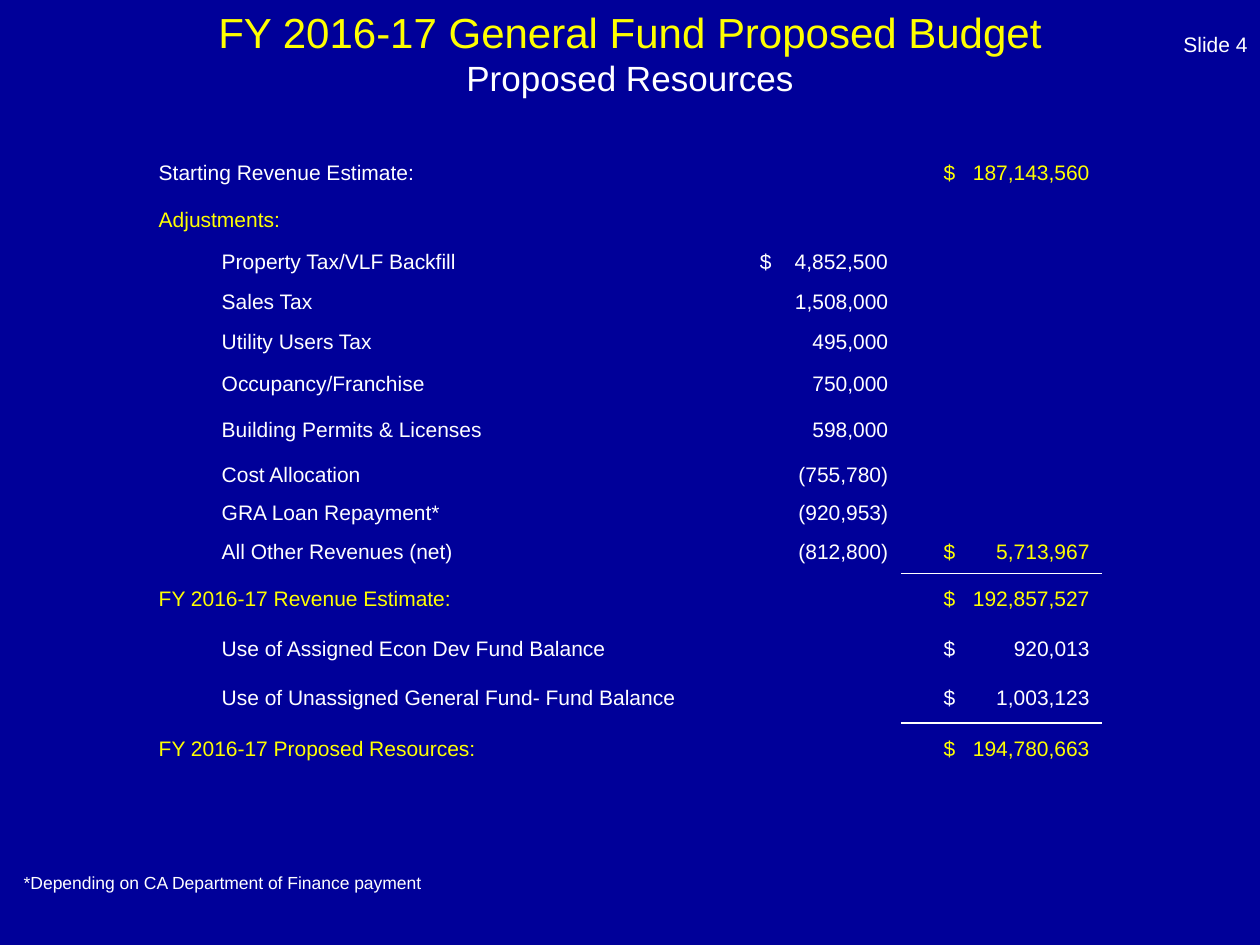
from lxml.etree import SubElement as Sub
from pptx import Presentation
from pptx.dml.color import RGBColor
from pptx.enum.text import MSO_ANCHOR as Anchor, PP_ALIGN as Align
from pptx.oxml.ns import qn
from pptx.util import Pt

NAVY = RGBColor(0x00, 0x00, 0x99)
WHITE = RGBColor(0xFF, 0xFF, 0xFF)
GOLD = RGBColor(0xFF, 0xFF, 0x00)

PLAIN = "{2D5ABB26-0587-4C30-8999-92F81FD0307C}"  # no style, no grid
COLS = [326.2, 105.1, 115.2]
PAD = 7.2
SIGN = 24.5  # from a cell's left edge to its dollar sign

# height, label, label colour, indented, amount, total, total colour
ROWS = [
    (29.5, "Starting Revenue Estimate:", WHITE, False, "", "$187,143,560", GOLD),
    (24.5, "Adjustments:", GOLD, False, "", "", GOLD),
    (23.8, "Property Tax/VLF Backfill", WHITE, True, "$4,852,500", "", GOLD),
    (20.5, "Sales Tax", WHITE, True, "1,508,000", "", GOLD),
    (23.8, "Utility Users Tax", WHITE, True, "495,000", "", GOLD),
    (23.8, "Occupancy/Franchise", WHITE, True, "750,000", "", GOLD),
    (29.5, "Building Permits & Licenses", WHITE, True, "598,000", "", GOLD),
    (20.5, "Cost Allocation", WHITE, True, "(755,780)", "", GOLD),
    (20.5, "GRA Loan Repayment*", WHITE, True, "(920,953)", "", GOLD),
    (23.8, "All Other Revenues (net)", WHITE, True, "(812,800)", "$5,713,967", GOLD),
    (29.5, "FY 2016-17 Revenue Estimate:", GOLD, False, "", "$192,857,527", GOLD),
    (28, "Use of Assigned Econ Dev Fund Balance", WHITE, True, "", "$920,013", WHITE),
    (28, "Use of Unassigned General Fund- Fund Balance", WHITE, True, "",
     "$1,003,123", WHITE),
    (29.5, "FY 2016-17 Proposed Resources:", GOLD, False, "", "$194,780,663", GOLD),
]
SUMS = (10, 13)  # rows with a rule above them


def write(para, text, size=12, color=WHITE, align=Align.LEFT, font="Arial"):
    para.alignment = align
    run = para.add_run()
    run.text = text
    run.font.name = font
    run.font.size = Pt(size)
    run.font.color.rgb = color


def edge(cell, drawn):
    """Rule the sides named in drawn in white and leave the others bare."""
    props = cell._tc.get_or_add_tcPr()
    for side in "LRTB":
        line = Sub(props, qn("a:ln" + side), w=str(Pt(1)))
        if side in drawn:
            fill = Sub(line, qn("a:solidFill"))
            Sub(fill, qn("a:srgbClr"), val=str(WHITE))
        else:
            Sub(line, qn("a:noFill"))


class Deck:
    def __init__(self):
        self.prs = Presentation()
        self.prs.slide_width, self.prs.slide_height = Pt(720), Pt(540)
        self.slide = self.prs.slides.add_slide(self.prs.slide_layouts[6])
        fill = self.slide.background.fill
        fill.solid()
        fill.fore_color.rgb = NAVY

    def label(self, box, *parts, anchor=Anchor.TOP, align=Align.LEFT):
        """Add a text box with one line for each (text, size, colour)."""
        frame = self.slide.shapes.add_textbox(*map(Pt, box)).text_frame
        frame.word_wrap = True
        frame.vertical_anchor = anchor
        para = frame.paragraphs[0]
        for i, (text, size, color) in enumerate(parts):
            if i:
                para.add_line_break()
            write(para, text, size, color, align)

    def money(self, cell, text, width, color):
        """Set a figure right, with any dollar sign on a left edge of its own."""
        para = cell.text_frame.paragraphs[0]
        if not text:
            # an empty cell at the default 18 pt would stretch its row
            Sub(para._p, qn("a:endParaRPr"), sz="1200")
            return
        if not text.startswith("$"):
            write(para, text, color=color, align=Align.RIGHT)
            return
        cell.margin_left = Pt(SIGN)
        tabs = Sub(para._p.get_or_add_pPr(), qn("a:tabLst"))
        stop = Pt(width - SIGN - PAD - 0.1)
        Sub(tabs, qn("a:tab"), pos=str(stop), algn="r")
        write(para, "$\t" + text[1:], color=color)

    def table(self, left, top):
        high = sum(row[0] for row in ROWS)
        shape = self.slide.shapes.add_table(
            len(ROWS), len(COLS), Pt(left), Pt(top), Pt(sum(COLS)), Pt(high))
        grid = shape.table
        grid.first_row = grid.horz_banding = False
        grid._tbl.tblPr.find(qn("a:tableStyleId")).text = PLAIN
        for col, width in zip(grid.columns, COLS):
            col.width = Pt(width)
        for i, (high, name, hue, inner, part, total, tint) in enumerate(ROWS):
            grid.rows[i].height = Pt(high)
            cells = [grid.cell(i, j) for j in range(len(COLS))]
            ruled = "T" * (i in SUMS) + "B" * (i + 1 in SUMS)
            for cell, drawn in zip(cells, ("", "", ruled)):
                cell.vertical_anchor = Anchor.MIDDLE
                edge(cell, drawn)
                cell.fill.background()
            para = cells[0].text_frame.paragraphs[0]
            if inner:
                para.level = 1
                pr = para._p.get_or_add_pPr()
                pr.set("marL", str(Pt(36)))
                pr.set("indent", "0")
            write(para, name, color=hue)
            for cell, text, width, color in zip(
                    cells[1:], (part, total), COLS[1:], (WHITE, tint)):
                self.money(cell, text, width, color)


def main():
    deck = Deck()
    deck.label((552, 0, 168, 36), ("Slide 4", 12, WHITE),
               anchor=Anchor.BOTTOM, align=Align.RIGHT)
    deck.table(83.5, 84.2)
    deck.label((24, 6, 672, 48),
               ("FY 2016-17 General Fund Proposed Budget", 24, GOLD),
               ("Proposed Resources", 20, WHITE),
               anchor=Anchor.MIDDLE, align=Align.CENTER)
    deck.label((6.5, 494.6, 305.3, 19.4),
               ("*Depending on CA Department of Finance payment", 10, WHITE))
    deck.prs.save("out.pptx")


if __name__ == "__main__":
    main()
